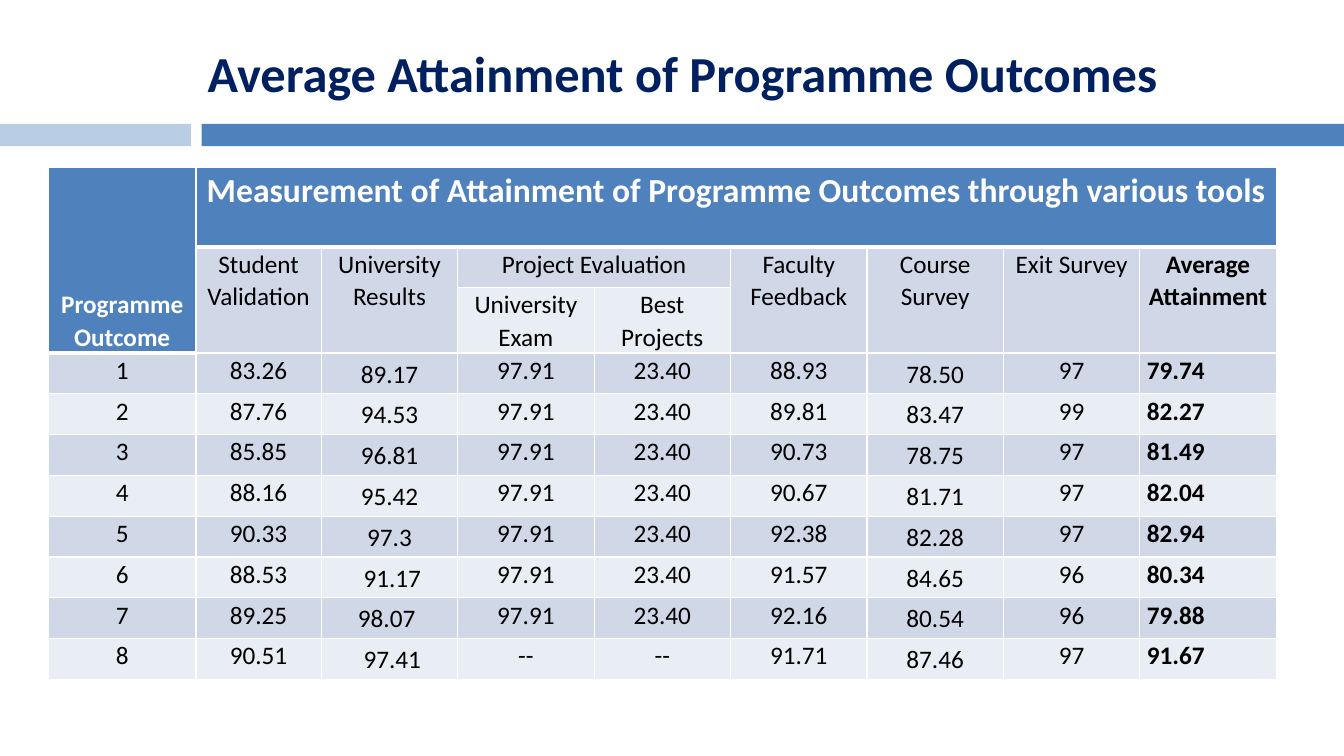
from dataclasses import dataclass

from lxml.etree import SubElement
from pptx import Presentation
from pptx.dml.color import RGBColor
from pptx.enum.shapes import MSO_SHAPE
from pptx.enum.text import MSO_ANCHOR, PP_ALIGN
from pptx.oxml.ns import qn
from pptx.util import Inches, Pt


@dataclass(frozen=True)
class Theme:
    font: str = "Calibri"
    title_size: int = 36
    banner_size: int = 24
    cell_size: int = 18
    line_spacing: float = 1.07
    thin_border: int = 1
    thick_border: int = 3
    navy: str = "002060"
    blue: str = "4F81BD"
    pale_blue: str = "B9CDE5"
    dark_band: str = "D0D8E8"
    light_band: str = "E9EDF4"
    white: str = "FFFFFF"
    black: str = "000000"


@dataclass(frozen=True)
class Box:
    left: float
    top: float
    width: float
    height: float

    def emu(self):
        return [Inches(n) for n in (self.left, self.top, self.width, self.height)]


THEME = Theme()
SLIDE = Box(0, 0, 13.33, 7.5)
TITLE_BOX = Box(1.94, 0.27, SLIDE.width - 1.94, 0.9)
BAND_BOX = Box(0, 1.23, SLIDE.width, 0.22)
TABLE_BOX = Box(0.48, 1.66, 12.18, 5.08)

COLUMN_WEIGHTS = [1.46, 1.24] + [1.35] * 7
HEADER_HEIGHTS = [0.79, 0.4, 0.65]

# Header cells: row, column, rows spanned, columns spanned, wording
TOP_HEADERS = [
    (0, 0, 3, 1, "Programme Outcome"),
    (0, 1, 1, 8, "Measurement of Attainment of Programme Outcomes through various tools"),
]
TOOL_HEADERS = [
    (1, 1, 2, 1, "Student Validation"),
    (1, 2, 2, 1, "University Results"),
    (1, 3, 1, 2, "Project Evaluation"),
    (1, 5, 2, 1, "Faculty Feedback"),
    (1, 6, 2, 1, "Course Survey"),
    (1, 7, 2, 1, "Exit Survey"),
    (1, 8, 2, 1, "Average Attainment"),
    (2, 3, 1, 1, "University Exam"),
    (2, 4, 1, 1, "Best Projects"),
]
RESULTS = [
    ("1", "83.26", "89.17", "97.91", "23.40", "88.93", "78.50", "97", "79.74"),
    ("2", "87.76", "94.53", "97.91", "23.40", "89.81", "83.47", "99", "82.27"),
    ("3", "85.85", "96.81", "97.91", "23.40", "90.73", "78.75", "97", "81.49"),
    ("4", "88.16", "95.42", "97.91", "23.40", "90.67", "81.71", "97", "82.04"),
    ("5", "90.33", "97.3", "97.91", "23.40", "92.38", "82.28", "97", "82.94"),
    ("6", "88.53", " 91.17", "97.91", "23.40", "91.57", "84.65", "96", "80.34"),
    ("7", "89.25", "98.07 ", "97.91", "23.40", "92.16", "80.54", "96", "79.88"),
    ("8", "90.51", " 97.41", "--", "--", "91.71", "87.46", "97", "91.67"),
]
MIDDLE_COLUMNS = (2, 6)
AVERAGE_COLUMN = 8


def color(name):
    return RGBColor.from_string(name)


def format_paragraph(para, size, ink, bold, align):
    para.alignment = align
    for span in para.runs:
        span.font.name = THEME.font
        span.font.size = Pt(size)
        span.font.bold = bold
        span.font.color.rgb = color(ink)


def add_title(page, box, wording):
    title = page.shapes.title
    title.left, title.top, title.width, title.height = box.emu()
    frame = title.text_frame
    frame.text = wording
    frame.word_wrap = True
    frame.vertical_anchor = MSO_ANCHOR.MIDDLE
    frame.margin_left = frame.margin_right = Inches(0.12)
    frame.margin_top = frame.margin_bottom = Inches(0.06)
    format_paragraph(frame.paragraphs[0], THEME.title_size, THEME.navy, True, PP_ALIGN.LEFT)


def add_band(page, box):
    """Short pale bar, a gap, then the long bar up to the right edge."""
    short, start = 0.142 * box.width, 0.15 * box.width
    bars = [(0, short, THEME.pale_blue), (start, box.width - start, THEME.blue)]
    for offset, width, fill in bars:
        place = Box(box.left + offset, box.top, width, box.height)
        bar = page.shapes.add_shape(MSO_SHAPE.RECTANGLE, *place.emu())
        bar.shadow.inherit = False
        bar.fill.solid()
        bar.fill.fore_color.rgb = color(fill)
        bar.line.fill.background()


def paint_cell(cell, fill, bottom):
    """Draw white borders, then the fill."""
    properties = cell._tc.get_or_add_tcPr()
    for side in ("L", "R", "T", "B"):
        width = bottom if side == "B" else THEME.thin_border
        line = SubElement(properties, qn(f"a:ln{side}"), w=str(Pt(width)))
        solid = SubElement(line, qn("a:solidFill"))
        SubElement(solid, qn("a:srgbClr"), val=THEME.white)
    cell.fill.solid()
    cell.fill.fore_color.rgb = color(fill)


def write_cell(cell, wording, size=THEME.cell_size, ink=THEME.black, bold=False,
               align=PP_ALIGN.CENTER, anchor=MSO_ANCHOR.TOP):
    cell.margin_left = cell.margin_right = Inches(0.07)
    cell.margin_top = cell.margin_bottom = 0
    cell.vertical_anchor = anchor
    cell.text_frame.text = wording
    para = cell.text_frame.paragraphs[0]
    para.line_spacing = THEME.line_spacing
    format_paragraph(para, size, ink, bold, align)


def add_header(table, row, column, rows, columns, wording, fill, bottom, **style):
    for r in range(row, row + rows):
        for c in range(column, column + columns):
            paint_cell(table.cell(r, c), fill, bottom)
    cell = table.cell(row, column)
    if rows * columns > 1:
        cell.merge(table.cell(row + rows - 1, column + columns - 1))
    write_cell(cell, wording, **style)


def add_attainment_table(page, box):
    first = len(HEADER_HEIGHTS)
    result_height = (box.height - sum(HEADER_HEIGHTS)) / len(RESULTS)
    heights = HEADER_HEIGHTS + [result_height] * len(RESULTS)
    table = page.shapes.add_table(len(heights), len(COLUMN_WEIGHTS), *box.emu()).table
    table.first_row = table.horz_banding = False
    for column, weight in zip(table.columns, COLUMN_WEIGHTS):
        column.width = Inches(box.width * weight / sum(COLUMN_WEIGHTS))
    for row, height in zip(table.rows, heights):
        row.height = Inches(height)

    # Headers
    for header in TOP_HEADERS:
        corner = header[1] == 0
        add_header(table, *header, THEME.blue, THEME.thick_border, ink=THEME.white, bold=True,
                   size=THEME.cell_size if corner else THEME.banner_size,
                   anchor=MSO_ANCHOR.BOTTOM if corner else MSO_ANCHOR.TOP)
    for header in TOOL_HEADERS:
        fill = THEME.dark_band if header[0] == 1 else THEME.light_band
        add_header(table, *header, fill, THEME.thin_border, bold=header[1] == AVERAGE_COLUMN)

    # Results in alternating bands
    for index, values in enumerate(RESULTS):
        fill = THEME.light_band if index % 2 else THEME.dark_band
        for column, value in enumerate(values):
            cell = table.cell(first + index, column)
            average = column == AVERAGE_COLUMN
            paint_cell(cell, fill, THEME.thin_border)
            write_cell(cell, value, bold=average,
                       align=PP_ALIGN.LEFT if average else PP_ALIGN.CENTER,
                       anchor=MSO_ANCHOR.MIDDLE if column in MIDDLE_COLUMNS else MSO_ANCHOR.TOP)


def main():
    deck = Presentation()
    deck.slide_width, deck.slide_height = Inches(SLIDE.width), Inches(SLIDE.height)
    page = deck.slides.add_slide(deck.slide_layouts[5])
    add_band(page, BAND_BOX)
    add_title(page, TITLE_BOX, "Average Attainment of Programme Outcomes")
    add_attainment_table(page, TABLE_BOX)
    deck.save("out.pptx")


if __name__ == "__main__":
    main()
